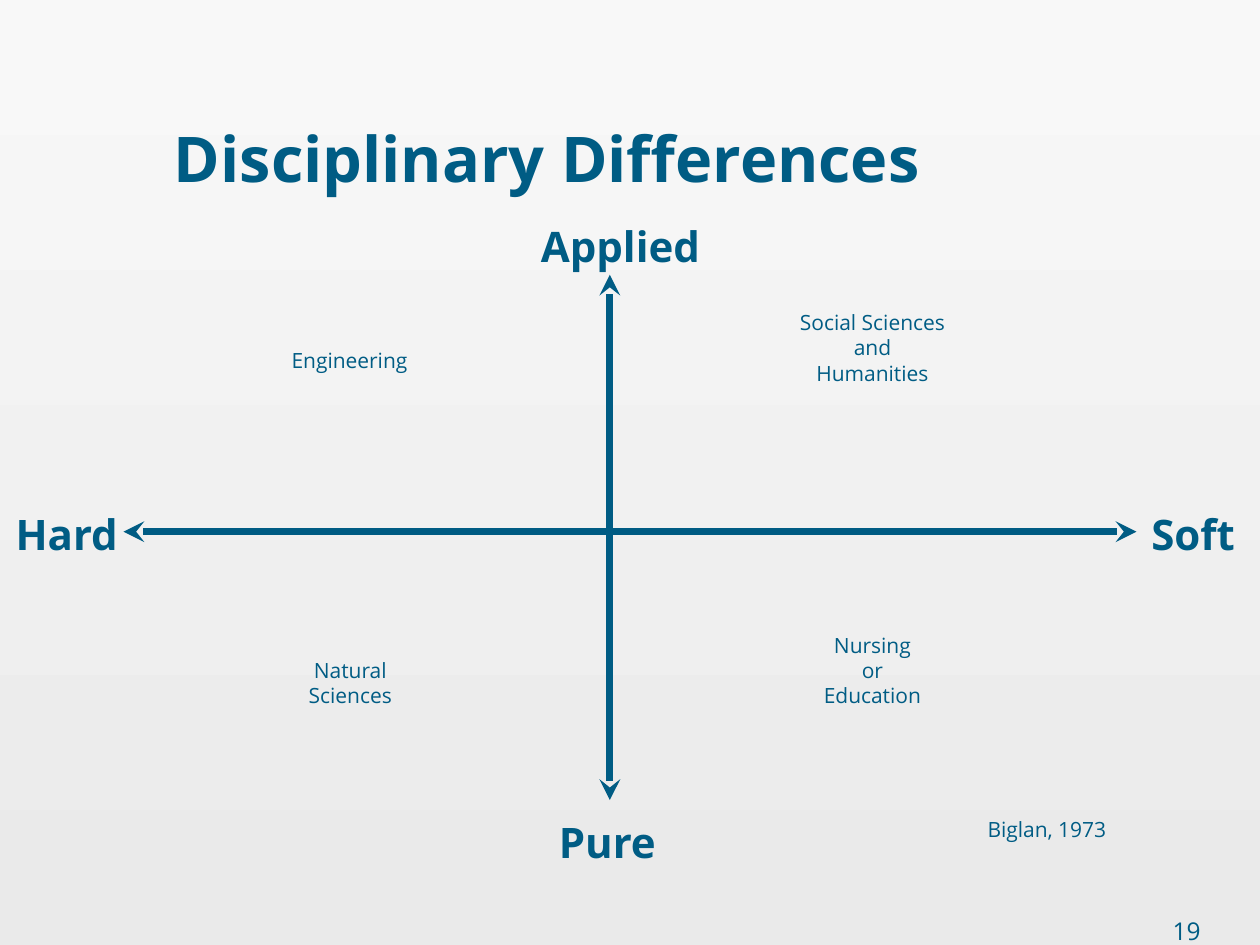
import pptx
import pptx.dml.color
import pptx.enum.shapes
import pptx.enum.text
import pptx.oxml.ns
import pptx.util
from lxml import etree

Inches = pptx.util.Inches
ALIGN = pptx.enum.text.PP_ALIGN
ANCHOR = pptx.enum.text.MSO_ANCHOR
AUTO_SIZE = pptx.enum.text.MSO_AUTO_SIZE
COLORS = {"ink": "005C84", "background_top": "F8F8F8", "background_bottom": "EAEAEA"}


def color(name):
    return pptx.dml.color.RGBColor.from_string(COLORS[name])


def write_text(frame, text, *, font="Open Sans", size=12, bold=False, align=ALIGN.CENTER,
               anchor=ANCHOR.TOP, margin=None, wrap=True, auto_size=AUTO_SIZE.NONE):
    """Newlines start paragraphs; vertical tabs break lines within one."""
    frame.text = text
    frame.word_wrap = wrap
    frame.auto_size = auto_size
    frame.vertical_anchor = anchor
    if margin is not None:
        frame.margin_left = frame.margin_right = margin
        frame.margin_top = frame.margin_bottom = margin
    for paragraph in frame.paragraphs:
        paragraph.alignment = align
        for run in paragraph.runs:
            run.font.name = font
            run.font.size = pptx.util.Pt(size)
            run.font.bold = bold
            run.font.color.rgb = color("ink")


class SlideBuilder:
    def __init__(self, presentation):
        self.slide = presentation.slides.add_slide(presentation.slide_layouts[5])
        self.line_width = pptx.util.Pt(4)

    def background(self):
        fill = self.slide.background.fill
        fill.gradient()
        fill.gradient_angle = 270
        for stop, name in zip(fill.gradient_stops, ("background_top", "background_bottom")):
            stop.color.rgb = color(name)

    def title(self, text, left, top, width, height):
        shape = self.slide.shapes.title
        shape.left, shape.top = Inches(left), Inches(top)
        shape.width, shape.height = Inches(width), Inches(height)
        write_text(shape.text_frame, text, size=36, bold=True, align=ALIGN.LEFT,
                   anchor=ANCHOR.BOTTOM, margin=0)

    def text(self, text, left, top, width, height, **style):
        shape = self.slide.shapes.add_textbox(
            Inches(left), Inches(top), Inches(width), Inches(height))
        write_text(shape.text_frame, text, **style)

    def axis(self, *ends):
        connector = self.slide.shapes.add_connector(
            pptx.enum.shapes.MSO_CONNECTOR.STRAIGHT, *map(Inches, ends))
        connector.line.color.rgb = color("ink")
        connector.line.width = self.line_width
        line = connector.line._get_or_add_ln()
        for end in ("a:headEnd", "a:tailEnd"):
            etree.SubElement(line, pptx.oxml.ns.qn(end), type="stealth")
        etree.SubElement(connector._element.spPr, pptx.oxml.ns.qn("a:effectLst"))


def main():
    presentation = pptx.Presentation()
    presentation.slide_width, presentation.slide_height = Inches(10), Inches(7.5)
    builder = SlideBuilder(presentation)

    # Background, page number and title
    builder.background()
    builder.text("19", 7.2, 6.98, 2.33, 0.52, size=14, align=ALIGN.RIGHT,
                 anchor=ANCHOR.BOTTOM, margin=0)
    builder.title("Disciplinary Differences", 1.38, 0.3, 8.12, 1.25)

    # Axes
    builder.axis(0.98, 4.22, 9.02, 4.22)
    builder.axis(4.84, 6.35, 4.84, 2.18)

    # Axis labels
    for label, left, top, width in (
        ("Hard", 0, 3.99, 1.06),
        ("Soft", 8.94, 3.99, 1.06),
        ("Applied", 4.06, 1.7, 1.73),
        ("Pure", 4.21, 6.43, 1.22),
    ):
        builder.text(label, left, top, width, 0.5, size=24, bold=True,
                     auto_size=AUTO_SIZE.SHAPE_TO_FIT_TEXT)

    # Disciplines in each quadrant, then the citation
    for label, left, top, width, height, wrap in (
        ("Engineering", 2.01, 2.71, 1.53, 0.4, False),
        ("Social Sciences\vand\vHumanities", 5.94, 2.41, 1.97, 1, False),
        ("Nursing\vor\nEducation", 6.11, 4.97, 1.63, 1, True),
        ("Natural\vSciences", 2.17, 5.17, 1.22, 0.8, False),
        ("Biglan, 1973", 7.13, 6.43, 2.36, 0.4, True),
    ):
        builder.text(label, left, top, width, height, wrap=wrap,
                     auto_size=AUTO_SIZE.SHAPE_TO_FIT_TEXT)

    presentation.save("out.pptx")


if __name__ == "__main__":
    main()
